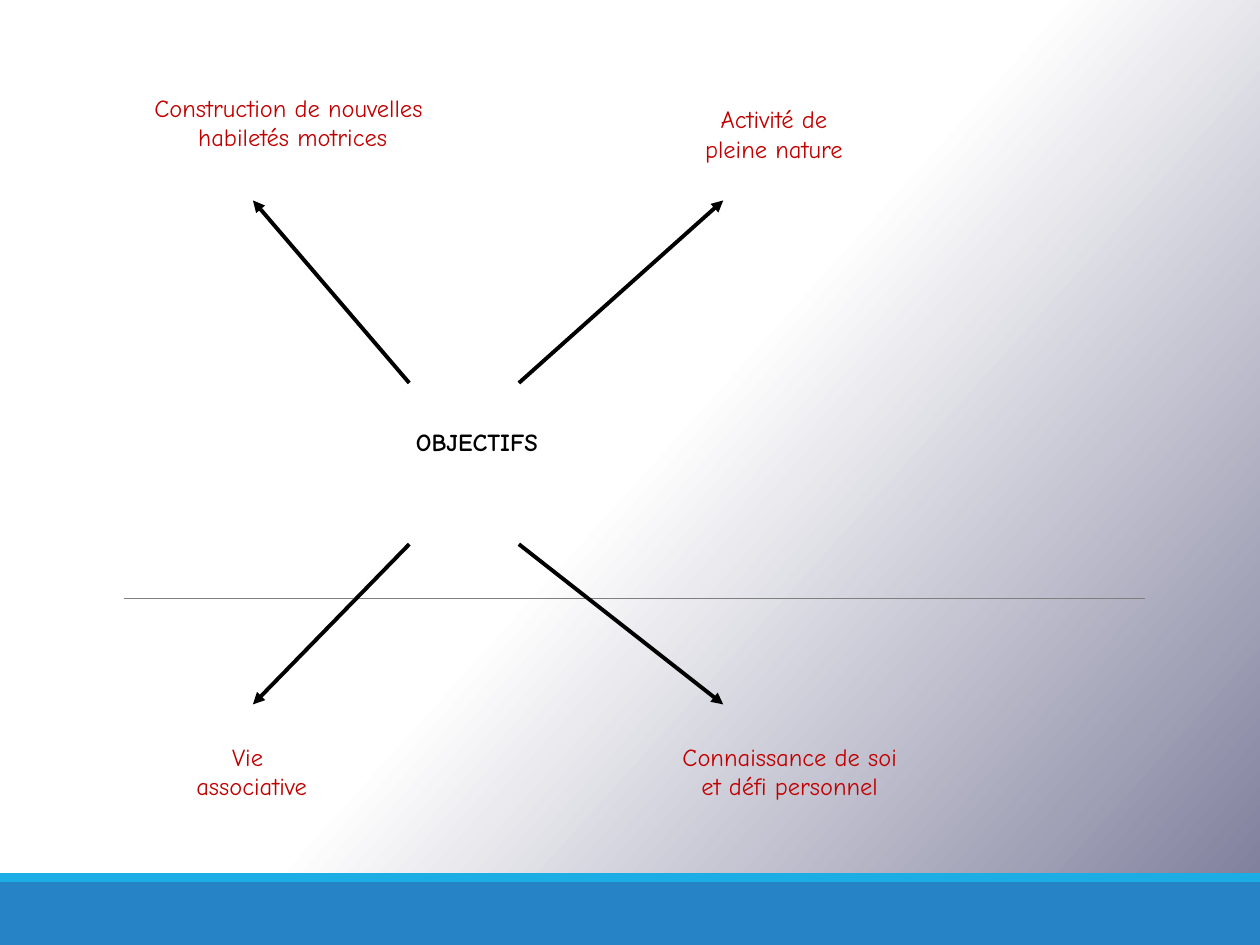
from lxml.etree import SubElement
from pptx import Presentation
from pptx.dml.color import RGBColor
from pptx.enum.shapes import MSO_CONNECTOR, MSO_SHAPE
from pptx.enum.text import PP_ALIGN
from pptx.oxml.ns import qn
from pptx.util import Cm, Pt

FONT = "Comic Neue"
BLACK, RED, GREY = "000000", "C00000", "7F7F7F"
WIDTH, HEIGHT = 25.4, 19.05

# Content: lines of text, (left, top, width, height) in cm
CENTRE = (["OBJECTIFS"], (5.82, 8.48, 7.59, 1.8))
GOALS = [
    (["Activité de ", "pleine nature "], (12.09, 1.98, 7.19, 1.6)),
    (["Connaissance de soi ", "et défi personnel "], (10.9, 14.83, 10.21, 2.03)),
    (["Vie ", "associative"], (2.18, 14.83, 5.79, 1.4)),
    (["Construction de nouvelles", " habiletés motrices"], (1.17, 1.75, 9.3, 1.83)),
]
# Arrows run from the centre out to each goal: (x, end x), (y, end y)
ARROW_COLUMNS = [(8.25, 5.1), (10.46, 14.58)]
ARROW_ROWS = [(7.72, 4.04), (10.97, 14.2)]
# Footer bands: top, height, colour
BANDS = [(17.78, 1.27, "2683C6"), (17.6, 0.18, "1CADE4")]


def rgb(value):
    return RGBColor.from_string(value)


def add_line(s, start, end, color, width, arrow=False):
    points = [Cm(v) for v in (*start, *end)]
    line = s.shapes.add_connector(MSO_CONNECTOR.STRAIGHT, *points)
    line.line.color.rgb = rgb(color)
    line.line.width = Pt(width)
    sp_pr = line._element.spPr
    if arrow:
        SubElement(sp_pr.find(qn("a:ln")), qn("a:tailEnd"), type="triangle")
    SubElement(sp_pr, qn("a:effectLst"))


def add_label(s, lines, box, color, bold=False):
    tf = s.shapes.add_textbox(*[Cm(v) for v in box]).text_frame
    tf.word_wrap = True
    p = tf.paragraphs[0]
    p.alignment = PP_ALIGN.CENTER
    for i, text in enumerate(lines):
        if i:
            p.add_line_break()
        r = p.add_run()
        r.text = text
        r.font.name = FONT
        r.font.size = Pt(14)
        r.font.bold = bold
        r.font.color.rgb = rgb(color)


def main():
    prs = Presentation()
    prs.slide_width, prs.slide_height = Cm(WIDTH), Cm(HEIGHT)
    s = prs.slides.add_slide(prs.slide_layouts[6])

    # Background: white up to the middle, then fading to violet grey
    fill = s.background.fill
    fill.gradient()
    fill.gradient_angle = 360 - 42
    for stop, (position, color) in zip(fill.gradient_stops, [(0.5, "FFFFFF"), (1, "797998")]):
        stop.position = position
        stop.color.rgb = rgb(color)

    # Footer bands and rule
    for top, height, color in BANDS:
        sp = s.shapes.add_shape(MSO_SHAPE.RECTANGLE, 0, Cm(top), Cm(WIDTH), Cm(height))
        sp.shadow.inherit = False
        sp.fill.solid()
        sp.fill.fore_color.rgb = rgb(color)
        sp.line.fill.background()
    add_line(s, (2.51, 12.07), (23.09, 12.07), GREY, 0.75)

    # Labels
    add_label(s, *CENTRE, BLACK, bold=True)
    for lines, box in GOALS:
        add_label(s, lines, box, RED)

    # Arrows
    for x, end_x in ARROW_COLUMNS:
        for y, end_y in ARROW_ROWS:
            add_line(s, (x, y), (end_x, end_y), BLACK, 2.25, arrow=True)

    prs.save("out.pptx")


if __name__ == "__main__":
    main()
